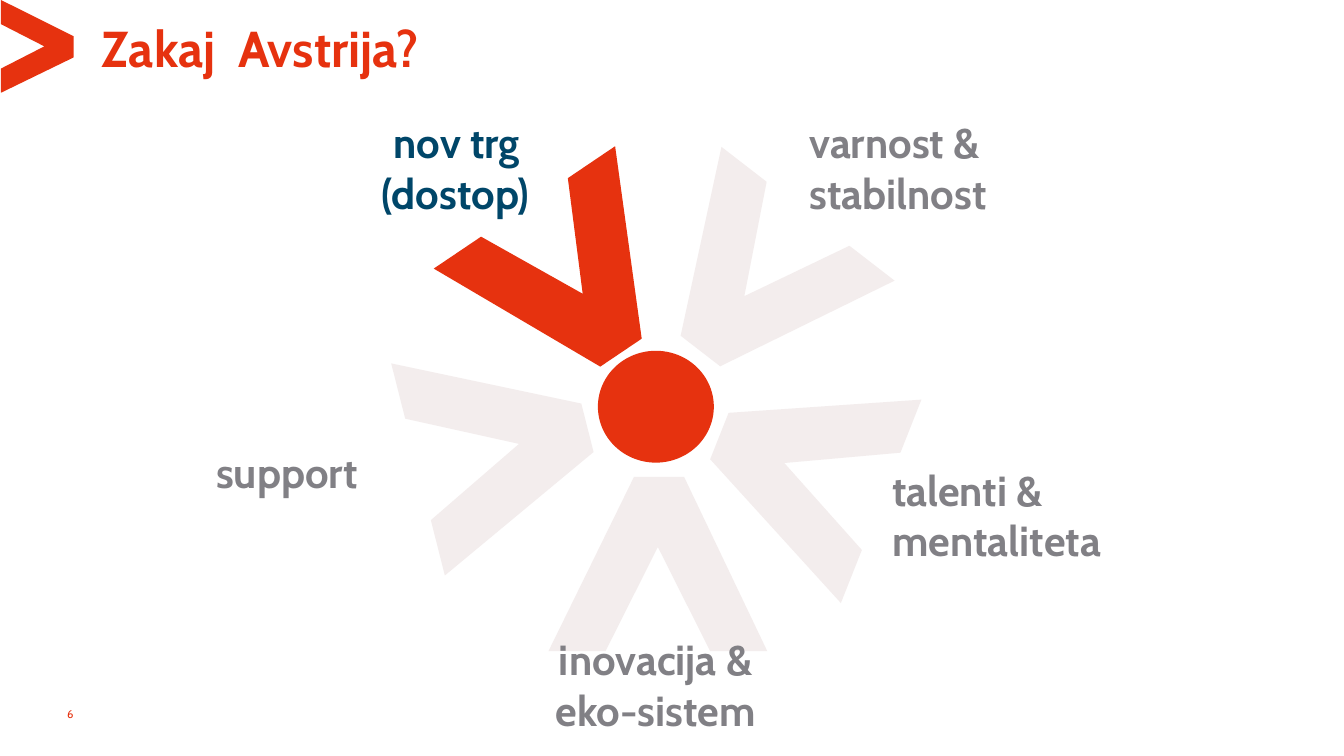
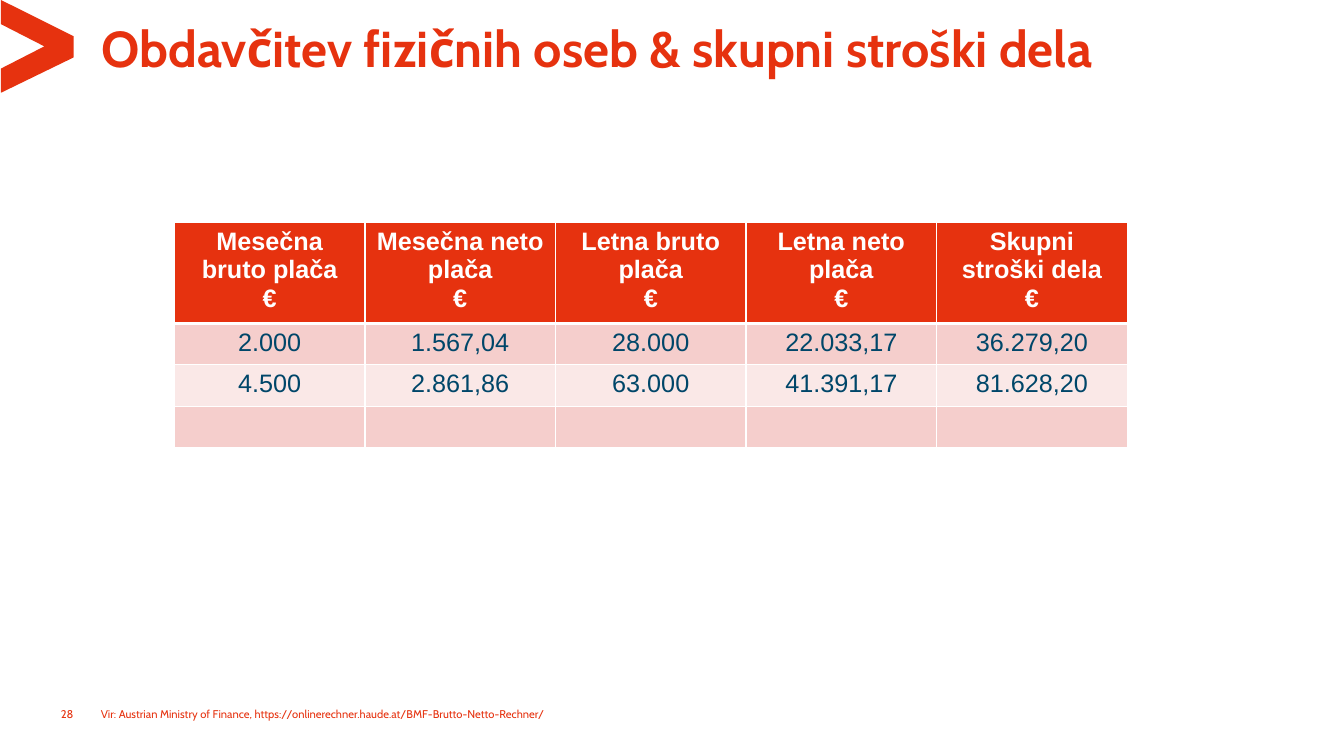
from dataclasses import dataclass
from typing import NamedTuple

from lxml import etree
from pptx import Presentation, util as u
from pptx.dml import color
from pptx.enum import shapes, text
from pptx.oxml import ns

EMU_PER_PX = 9144
LEFT, CENTER, RIGHT = text.PP_ALIGN.LEFT, text.PP_ALIGN.CENTER, text.PP_ALIGN.RIGHT


@dataclass(frozen=True)
class Theme:
    accent: str = "E6320F"
    navy: str = "004669"
    grey: str = "818085"
    pale: str = "F3EDED"
    white: str = "FFFFFF"
    bands: tuple = ("F5CECC", "FAE8E7")
    font: str = "Cabin"
    table_font: str = "Arial"
    title_size: int = 36
    label_size: int = 30
    table_size: int = 18
    small_size: int = 8


THEME = Theme()


class Box(NamedTuple):
    x: int
    y: int
    w: int
    h: int

    def emu(self) -> list:
        return [px(v) for v in self]


class Style(NamedTuple):
    size: int
    color: str
    bold: bool = False
    font: str = THEME.font


class Arrow(NamedTuple):
    x: int
    y: int
    angle: float
    color: str = THEME.pale


class Label(NamedTuple):
    text: str
    box: Box
    align: text.PP_ALIGN
    color: str = THEME.grey


TITLE = Style(THEME.title_size, THEME.accent, True)
SMALL = Style(THEME.small_size, THEME.accent)
HEADER = Style(THEME.table_size, THEME.white, True, THEME.table_font)
BODY = Style(THEME.table_size, THEME.navy, False, THEME.table_font)

CHEVRON_SIZE = (72, 92)
CHEVRON = ((0, 0), (0, 24), (43, 46), (0, 68), (0, 92), (72, 57), (72, 36))
CORNER = Box(1, 0, 72, 92)
ARROW_SIZE = (173, 217)
HUB = Box(593, 348, 115, 111)
NUMBER_BOX = Box(13, 700, 60, 15)
SOURCE_BOX = Box(100, 687, 944, 28)

ARROWS = (
    Arrow(482, 169, 56, THEME.accent),
    Arrow(662, 172, 127.7),
    Arrow(707, 357, 201.6),
    Arrow(412, 336, 345.8),
    Arrow(566, 451, 270),
)
LABELS = (
    Label("nov trg \n(dostop)", Box(123, 111, 412, 66), RIGHT, THEME.navy),
    Label("talenti & \nmentaliteta", Box(875, 456, 459, 66), LEFT),
    Label("varnost & \nstabilnost", Box(793, 111, 520, 136), LEFT),
    Label("support", Box(94, 438, 381, 66), CENTER),
    Label("inovacija & eko-sistem", Box(517, 624, 267, 66), CENTER),
)

TABLE_AT = (173, 221)
COLUMN_W, HEADER_H, ROW_H = 189, 92, 41
TABLE_ROWS = (
    ("Mesečna bruto plača\n€", "Mesečna neto plača\n€", "Letna bruto plača\n€",
     "Letna neto plača\n€", "Skupni stroški dela\n€"),
    ("2.000", "1.567,04", "28.000", "22.033,17", "36.279,20"),
    ("4.500", "2.861,86", "63.000", "41.391,17", "81.628,20"),
    ("",) * 5,
)


def px(value: float) -> u.Emu:
    return u.Emu(round(value * EMU_PER_PX))


def rgb(value: str) -> color.RGBColor:
    return color.RGBColor.from_string(value)


def write(p, content: str, style: Style, align=LEFT) -> None:
    p.text = content
    p.alignment = align
    for r in p.runs:
        r.font.name = style.font
        r.font.size = u.Pt(style.size)
        r.font.bold = style.bold
        r.font.color.rgb = rgb(style.color)


def clear_insets(tf) -> None:
    tf.margin_left = tf.margin_top = tf.margin_right = tf.margin_bottom = 0


def paint(sp, fill: str) -> None:
    sp.shadow.inherit = False
    sp.fill.solid()
    sp.fill.fore_color.rgb = rgb(fill)
    sp.line.fill.background()


def add_text(s, box: Box, content: str, style: Style, align=LEFT, footer: bool = False) -> None:
    tf = s.shapes.add_textbox(*box.emu()).text_frame
    tf.word_wrap = True
    if footer:
        clear_insets(tf)
        tf.vertical_anchor = text.MSO_ANCHOR.BOTTOM
    write(tf.paragraphs[0], content, style, align)


def add_chevron(s, box: Box, fill: str, angle: float = 0):
    base_w, base_h = CHEVRON_SIZE
    points = [(px(box.x + x * box.w / base_w), px(box.y + y * box.h / base_h))
              for x, y in CHEVRON]
    builder = s.shapes.build_freeform(*points[0], scale=1.0)
    builder.add_line_segments(points[1:], close=True)
    sp = builder.convert_to_shape()
    paint(sp, fill)
    sp.rotation = angle
    return sp


def add_slide(prs, title: str, title_w: int, number: str):
    s = prs.slides.add_slide(prs.slide_layouts[5])
    sp = s.shapes.title
    sp.left, sp.top, sp.width, sp.height = Box(101, 23, title_w, 47).emu()
    tf = sp.text_frame
    tf.word_wrap = True
    tf.auto_size = text.MSO_AUTO_SIZE.NONE
    tf.vertical_anchor = text.MSO_ANCHOR.MIDDLE
    clear_insets(tf)
    write(tf.paragraphs[0], title, TITLE)
    add_text(s, NUMBER_BOX, number, SMALL, RIGHT, footer=True)
    return s


def set_border(cell, side: str, width: int) -> None:
    tc_pr = cell._tc.get_or_add_tcPr()
    line = etree.SubElement(tc_pr, ns.qn(f"a:ln{side}"), w=str(u.Pt(width)))
    fill = etree.SubElement(line, ns.qn("a:solidFill"))
    etree.SubElement(fill, ns.qn("a:srgbClr"), val=THEME.white)


def add_salary_table(s) -> None:
    n_rows, n_cols = len(TABLE_ROWS), len(TABLE_ROWS[0])
    box = Box(*TABLE_AT, n_cols * COLUMN_W, HEADER_H + (n_rows - 1) * ROW_H)
    table = s.shapes.add_table(n_rows, n_cols, *box.emu()).table
    table.horz_banding = False
    for column in table.columns:
        column.width = px(COLUMN_W)
    for i, values in enumerate(TABLE_ROWS):
        table.rows[i].height = px(ROW_H if i else HEADER_H)
        for j, value in enumerate(values):
            cell = table.cell(i, j)
            for side in "LRTB":
                under_header = (i, side) in ((0, "B"), (1, "T"))
                set_border(cell, side, 3 if under_header else 1)
            cell.fill.solid()
            cell.fill.fore_color.rgb = rgb(THEME.bands[(i - 1) % 2] if i else THEME.accent)
            write(cell.text_frame.paragraphs[0], value, BODY if i else HEADER, CENTER)


def build_reasons(prs) -> None:
    s = add_slide(prs, "Zakaj  Avstrija?", 944, "6")
    corner = add_chevron(s, CORNER, THEME.accent)
    s.slide_layout.shapes.element.append(corner.element)
    for arrow in ARROWS:
        add_chevron(s, Box(arrow.x, arrow.y, *ARROW_SIZE), arrow.color, arrow.angle)
    for label in LABELS:
        style = Style(THEME.label_size, label.color, True)
        add_text(s, label.box, label.text, style, label.align)
    hub = s.shapes.add_shape(shapes.MSO_SHAPE.FLOWCHART_CONNECTOR, *HUB.emu())
    paint(hub, THEME.accent)


def build_taxes(prs) -> None:
    s = add_slide(prs, "Obdavčitev fizičnih oseb & skupni stroški dela", 1029, "28")
    add_salary_table(s)
    add_text(s, SOURCE_BOX,
             "Vir: Austrian Ministry of Finance, "
             "https://onlinerechner.haude.at/BMF-Brutto-Netto-Rechner/",
             SMALL, footer=True)


def main() -> None:
    prs = Presentation()
    prs.slide_width, prs.slide_height = px(1333), px(750)
    build_reasons(prs)
    build_taxes(prs)
    prs.save("out.pptx")


if __name__ == "__main__":
    main()
